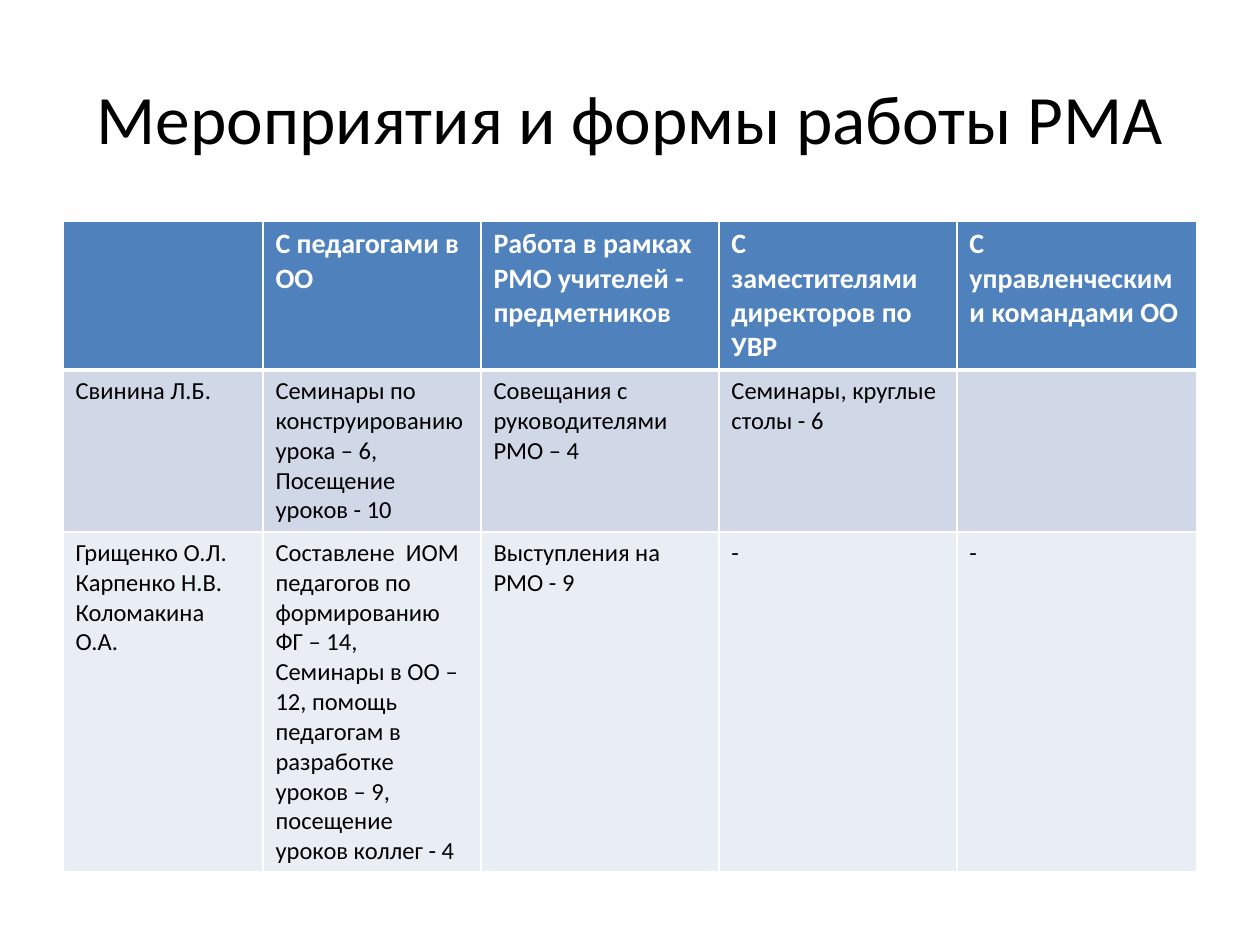
from lxml import etree
from pptx import Presentation
from pptx.dml.color import RGBColor
from pptx.enum.text import MSO_ANCHOR, PP_ALIGN
from pptx.oxml.ns import qn
from pptx.util import Pt

PX = 914400 / 126
MIDDLE = MSO_ANCHOR.MIDDLE
LEFT, CENTER = PP_ALIGN.LEFT, PP_ALIGN.CENTER

BLACK = RGBColor(0x00, 0x00, 0x00)
WHITE = RGBColor(0xFF, 0xFF, 0xFF)
HEADER_BLUE = RGBColor(0x4F, 0x81, 0xBD)
BAND_DARK = RGBColor(0xD0, 0xD8, 0xE8)
BAND_LIGHT = RGBColor(0xE9, 0xED, 0xF4)
ROW_FILLS = [HEADER_BLUE, BAND_DARK, BAND_LIGHT]

TITLE = "Мероприятия и формы работы РМА"
ACTIVITIES = [
    ["", "С педагогами в ОО", "Работа в рамках РМО учителей - предметников",
     "С  заместителями директоров по УВР", "С управленческими командами ОО"],
    ["Свинина Л.Б.",
     "Семинары по конструированию урока – 6,\nПосещение уроков - 10",
     "Совещания с руководителями РМО – 4", "Семинары, круглые столы - 6", ""],
    ["Грищенко О.Л.\nКарпенко Н.В.\nКоломакина О.А.",
     "Составлене  ИОМ педагогов по формированию ФГ – 14, Семинары в ОО – 12, "
     "помощь педагогам в разработке уроков – 9, посещение уроков коллег - 4",
     "Выступления на РМО - 9", "-", "-"],
]
COLUMN_WIDTHS = [200, 218, 238, 238, 240]
ROW_HEIGHTS = [149, 162, 340]


def px(length):
    return round(length * PX)


def write(frame, text, size=14, color=BLACK, bold=False, align=LEFT, font="Calibri"):
    """Fill a text frame, one paragraph for each line of text."""
    frame.word_wrap = True
    frame.text = text
    for paragraph in frame.paragraphs:
        paragraph.alignment = align
        style = paragraph.font
        style.name, style.size, style.bold = font, Pt(size), bold
        style.color.rgb = color
        for run in paragraph.runs:
            run.font.name, run.font.size, run.font.bold = font, Pt(size), bold
            run.font.color.rgb = color


class SlideBuilder:
    def __init__(self, slide, line_color=WHITE):
        self.slide = slide
        self.line_color = line_color

    def title(self, text, left, top, width, height):
        box = self.slide.shapes.add_textbox(px(left), px(top), px(width), px(height))
        box.text_frame.vertical_anchor = MIDDLE
        write(box.text_frame, text, size=39.6, align=CENTER)

    def borders(self, cell, **widths):
        properties = cell._tc.get_or_add_tcPr()
        for side in "LRTB":
            line = etree.SubElement(properties, qn(f"a:ln{side}"),
                                    w=str(Pt(widths.get(side, 1))))
            fill = etree.SubElement(line, qn("a:solidFill"))
            etree.SubElement(fill, qn("a:srgbClr"), val=str(self.line_color))

    def table(self, rows, left, top, widths, heights, fills):
        table = self.slide.shapes.add_table(
            len(rows), len(widths), px(left), px(top),
            px(sum(widths)), px(sum(heights))).table
        for column, width in zip(table.columns, widths):
            column.width = px(width)
        for r, (texts, height, fill) in enumerate(zip(rows, heights, fills)):
            table.rows[r].height = px(height)
            header = r == 0
            # The rule under the header is shared by the first two rows
            thick = {0: {"B": 3}, 1: {"T": 3}}.get(r, {})
            for c, text in enumerate(texts):
                cell = table.cell(r, c)
                self.borders(cell, **thick)
                cell.fill.solid()
                cell.fill.fore_color.rgb = fill
                write(cell.text_frame, text, size=16 if header else 14,
                      color=WHITE if header else BLACK, bold=header)


def main():
    deck = Presentation()
    deck.slide_width, deck.slide_height = px(1260), px(945)
    builder = SlideBuilder(deck.slides.add_slide(deck.slide_layouts[6]))

    # Heading
    builder.title(TITLE, 63, 38, 1134, 158)

    # Activities by person and audience
    builder.table(ACTIVITIES, 63, 221, COLUMN_WIDTHS, ROW_HEIGHTS, ROW_FILLS)

    deck.save("out.pptx")


if __name__ == "__main__":
    main()
